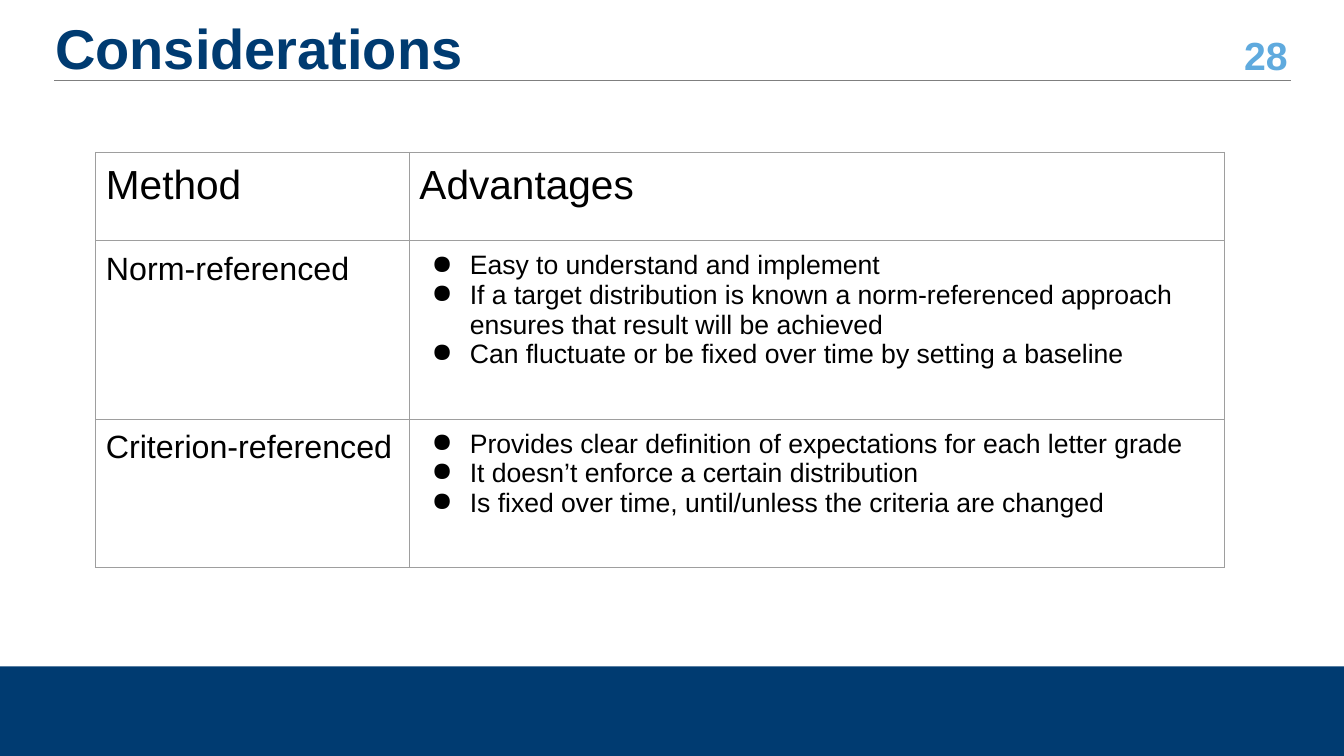
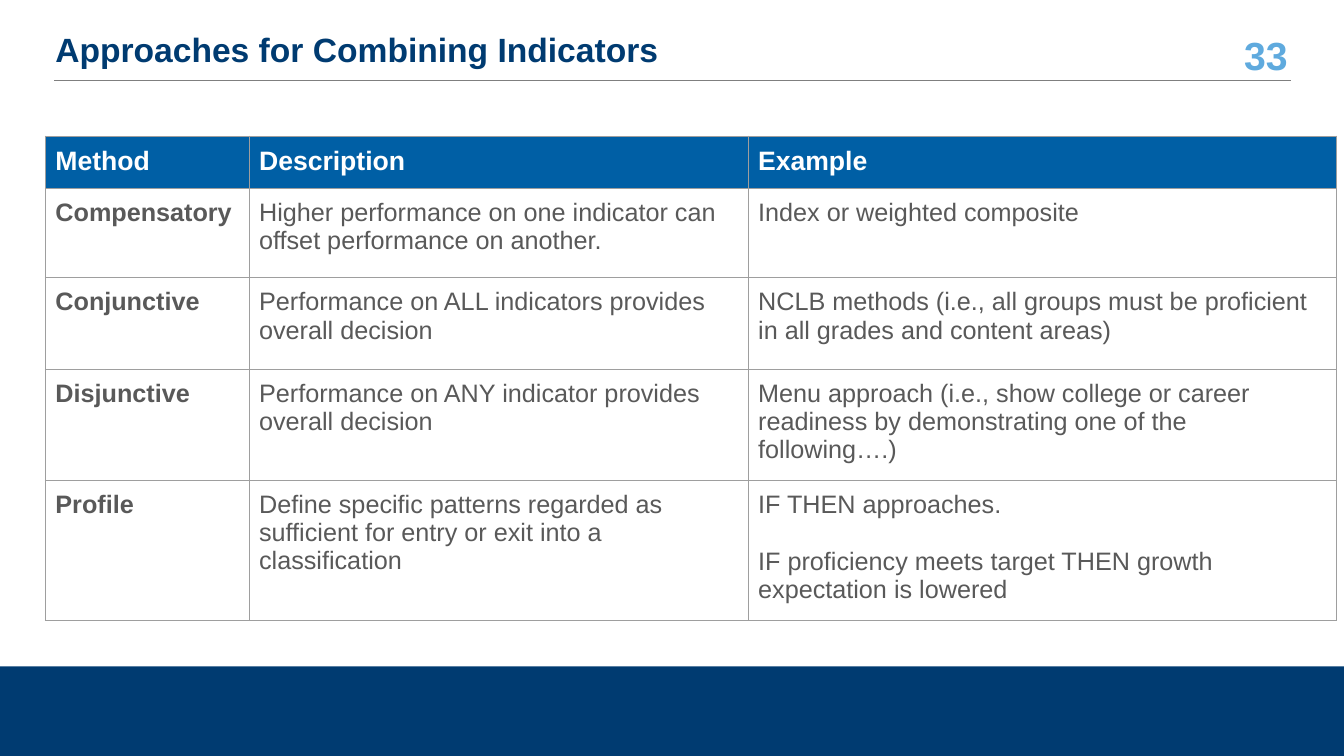
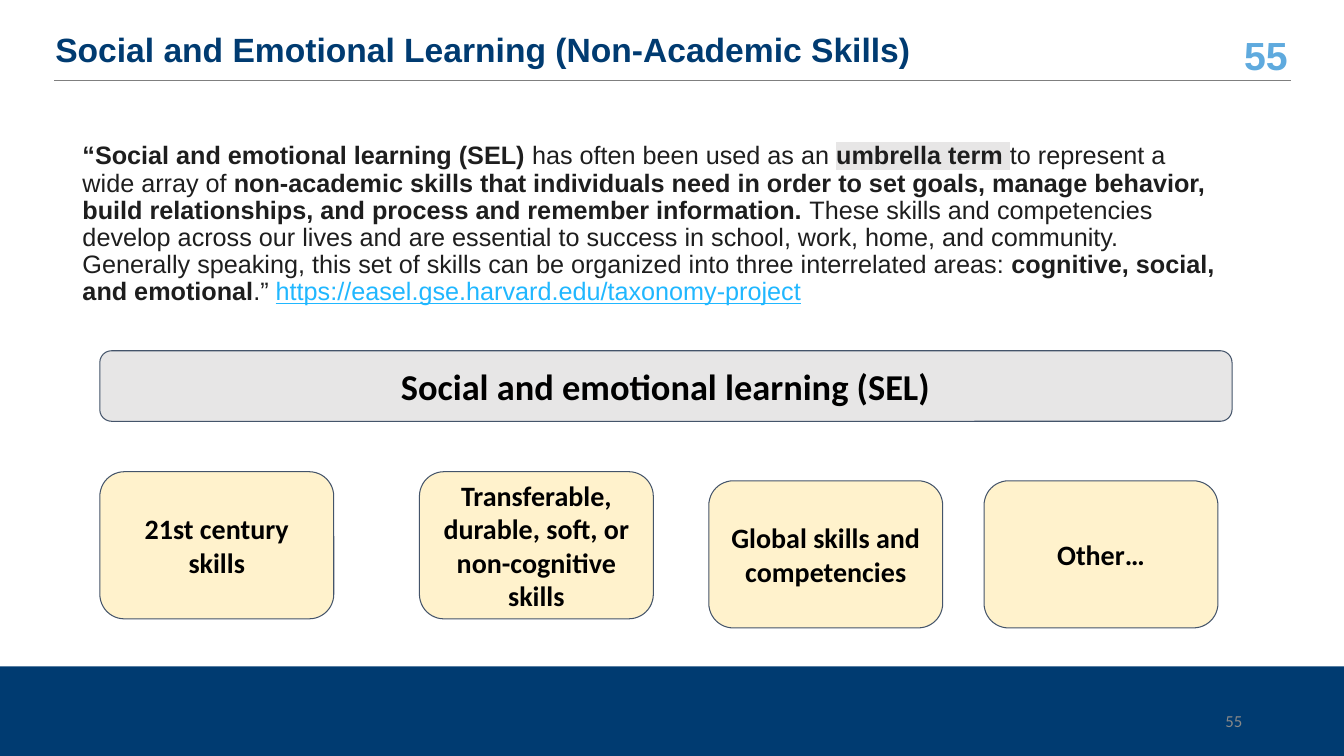
import pptx
import pptx.dml.color
import pptx.enum.shapes
import pptx.enum.text
import pptx.oxml
import pptx.oxml.ns
import pptx.util
from lxml import etree

Inches = pptx.util.Inches
Pt = pptx.util.Pt
SHAPE = pptx.enum.shapes.MSO_SHAPE
ALIGN = pptx.enum.text.PP_ALIGN
ANCHOR = pptx.enum.text.MSO_ANCHOR

COLORS = {
    "navy": "003B71", "sky": "5FAADE", "rule": "7F7F7F", "grid": "9E9E9E",
    "header": "005FA5", "white": "FFFFFF", "black": "000000", "gray": "595959",
    "ink": "1E1E1E", "link": "20B7FF", "silver": "E7E6E6", "cream": "FFF2CC",
    "slate": "44546A", "number": "888888",
}

CONSIDERATIONS = [
    ["Method", "Advantages"],
    ["Norm-referenced", [
        "Easy to understand and implement",
        "If a target distribution is known a norm-referenced approach ensures that result will be achieved",
        "Can fluctuate or be fixed over time by setting a baseline"]],
    ["Criterion-referenced", [
        "Provides clear definition of expectations for each letter grade",
        "It doesn’t enforce a certain distribution",
        "Is fixed over time, until/unless the criteria are changed"]],
]

APPROACHES = [
    ["Method", "Description", "Example"],
    ["Compensatory",
     "Higher performance on one indicator can offset performance on another.",
     "Index or weighted composite"],
    ["Conjunctive",
     "Performance on ALL indicators provides overall decision",
     "NCLB methods (i.e., all groups must be proficient in all grades and content areas)"],
    ["Disjunctive",
     "Performance on ANY indicator provides overall decision",
     "Menu approach (i.e., show college or career readiness by demonstrating one of the following….)"],
    ["Profile",
     "Define specific patterns regarded as sufficient for entry or exit into a classification",
     "IF THEN approaches.\nIF proficiency meets target THEN growth expectation is lowered"],
]

QUOTE = [
    ("“Social and emotional learning (SEL) ", "bold"),
    ("has often been used as an ", "plain"),
    ("umbrella term ", "marked"),
    ("to represent a wide array of", "plain"),
    (" non-academic skills that individuals need in order to set goals, manage behavior, "
     "build relationships, and process and remember information. ", "bold"),
    ("These skills and competencies develop across our lives and are essential to success in "
     "school, work, home, and community. Generally speaking, this set of skills can be "
     "organized into three interrelated areas: ", "plain"),
    ("cognitive, social, and emotional", "bold"),
    (".” ", "plain"),
    ("https://easel.gse.harvard.edu/taxonomy-project", "link"),
]

SKILLS = [
    (0.99, 4.68, "21st century skills"),
    (4.16, 4.68, "Transferable, durable, soft, or non-cognitive skills"),
    (7.03, 4.77, "Global skills and competencies"),
    (9.76, 4.77, "Other…"),
]


def rgb(color):
    """Return the named colour."""
    return pptx.dml.color.RGBColor.from_string(COLORS[color])


def style_run(run, size, color, bold=False, font="Arial"):
    """Set the look of one run."""
    run.font.size = Pt(size)
    run.font.name = font
    run.font.bold = bold
    run.font.color.rgb = rgb(color)


def style_text(frame, size, color, bold=False, font="Arial", align=ALIGN.LEFT):
    """Set the look of all text in a frame."""
    for paragraph in frame.paragraphs:
        paragraph.alignment = align
        for run in paragraph.runs:
            style_run(run, size, color, bold, font)


def add_text(slide, box, text="", anchor=ANCHOR.MIDDLE):
    """Add a wrapping text box and return its frame."""
    frame = slide.shapes.add_textbox(*map(Inches, box)).text_frame
    frame.word_wrap = True
    frame.vertical_anchor = anchor
    frame.text = text
    return frame


def add_block(slide, box, kind, fill, line=None):
    """Add a flat filled shape."""
    block = slide.shapes.add_shape(kind, *map(Inches, box))
    block.shadow.inherit = False
    block.fill.solid()
    block.fill.fore_color.rgb = rgb(fill)
    if line:
        block.line.color.rgb = rgb(line)
        block.line.width = Pt(0.75)
    else:
        block.line.fill.background()
    return block


def add_frame(deck, title, number, title_size=24):
    """Add a slide with its band, rule, title and number."""
    slide = deck.slides.add_slide(deck.slide_layouts[6])
    add_block(slide, (-0.01, 6.61, 13.34, 0.95), SHAPE.RECTANGLE, "navy")
    number_frame = add_text(slide, (12.07, 0.33, 0.8, 0.42), number)
    style_text(number_frame, 28, "sky", True, align=ALIGN.RIGHT)
    rule = slide.shapes.add_connector(
        pptx.enum.shapes.MSO_CONNECTOR.STRAIGHT,
        Inches(12.8), Inches(0.8), Inches(0.54), Inches(0.8))
    rule.line.color.rgb = rgb("rule")
    rule.line.width = Pt(0.75)
    etree.SubElement(rule.element.spPr, pptx.oxml.ns.qn("a:effectLst"))
    title_frame = add_text(slide, (0.45, 0.3, 11.6, 0.42), title)
    title_frame.paragraphs[0].line_spacing = 0.9
    style_text(title_frame, title_size, "navy", True)
    return slide


def add_borders(cell):
    """Draw a thin line on each side of a cell."""
    properties = cell._tc.get_or_add_tcPr()
    for side in ("lnL", "lnR", "lnT", "lnB"):
        properties.append(pptx.oxml.parse_xml(
            f'<a:{side} {pptx.oxml.ns.nsdecls("a")} w="9525"><a:solidFill>'
            f'<a:srgbClr val="{COLORS["grid"]}"/></a:solidFill></a:{side}>'))


def add_bullet(paragraph):
    """Give a paragraph a hanging round bullet."""
    properties = paragraph._p.get_or_add_pPr()
    properties.set("marL", str(Inches(0.5)))
    properties.set("indent", str(Inches(-0.38)))
    color = etree.SubElement(properties, pptx.oxml.ns.qn("a:buClr"))
    etree.SubElement(color, pptx.oxml.ns.qn("a:srgbClr"), val=COLORS["black"])
    etree.SubElement(properties, pptx.oxml.ns.qn("a:buChar"), char="●")


def add_grid(slide, left, top, widths, heights, rows, look):
    """Add a ruled table, with look giving size, colour, bold and fill of a cell."""
    table = slide.shapes.add_table(
        len(rows), len(widths), Inches(left), Inches(top),
        Inches(sum(widths)), Inches(sum(heights))).table
    table.first_row = table.horz_banding = False
    for column, width in zip(table.columns, widths):
        column.width = Inches(width)
    for row, height in zip(table.rows, heights):
        row.height = Inches(height)
    for i, row in enumerate(rows):
        for j, content in enumerate(row):
            size, color, bold, fill = look(i, j)
            cell = table.cell(i, j)
            cell.margin_left = cell.margin_right = Inches(0.1)
            cell.margin_top = cell.margin_bottom = Inches(0.1)
            add_borders(cell)
            if fill:
                cell.fill.solid()
                cell.fill.fore_color.rgb = rgb(fill)
            else:
                cell.fill.background()
            bulleted = isinstance(content, list)
            cell.text_frame.text = "\n".join(content) if bulleted else content
            for k, paragraph in enumerate(cell.text_frame.paragraphs):
                if bulleted:
                    add_bullet(paragraph)
                elif k:
                    paragraph.space_before = Pt(20.5)
            style_text(cell.text_frame, size, color, bold)


def considerations_look(row, column):
    """Return the look of a cell in the considerations table."""
    size = 29 if row == 0 else (23, 19)[column]
    return size, "black", False, None


def approaches_look(row, column):
    """Return the look of a cell in the approaches table."""
    if row == 0:
        return 19, "white", True, "header"
    return 18, "gray", column == 0, None


def add_quote(slide, box):
    """Add the quotation with its emphasis and source."""
    paragraph = add_text(slide, box, anchor=ANCHOR.TOP).paragraphs[0]
    paragraph.line_spacing = 0.9
    for text, emphasis in QUOTE:
        run = paragraph.add_run()
        run.text = text
        is_link = emphasis == "link"
        style_run(run, 18, "link" if is_link else "ink", emphasis in ("bold", "marked"))
        if is_link:
            run.font.underline = True
        if emphasis == "marked":
            run.font._rPr.find(pptx.oxml.ns.qn("a:solidFill")).addnext(pptx.oxml.parse_xml(
                f'<a:highlight {pptx.oxml.ns.nsdecls("a")}>'
                f'<a:srgbClr val="{COLORS["silver"]}"/></a:highlight>'))


def add_card(slide, box, text, fill, size):
    """Add a rounded card with centred bold text."""
    card = add_block(slide, box, SHAPE.ROUNDED_RECTANGLE, fill, "slate")
    frame = card.text_frame
    frame.word_wrap = True
    frame.vertical_anchor = ANCHOR.MIDDLE
    frame.margin_left = frame.margin_right = Inches(0.1)
    frame.margin_top = frame.margin_bottom = Inches(0.1)
    frame.text = text
    style_text(frame, size, "black", True, "Calibri", ALIGN.CENTER)


def build_considerations(deck):
    """Build the slide on the advantages of each method."""
    slide = add_frame(deck, "Considerations", "28", 40)
    add_grid(slide, 0.95, 1.51, [3.11, 8.08], [0.88, 1.77, 1.47],
             CONSIDERATIONS, considerations_look)


def build_approaches(deck):
    """Build the slide on combining indicators."""
    slide = add_frame(deck, "Approaches for Combining Indicators", "33")
    add_grid(slide, 0.45, 1.35, [2.02, 4.95, 5.84], [0.49, 0.89, 0.91, 1.04, 1.32],
             APPROACHES, approaches_look)


def build_learning(deck):
    """Build the slide on social and emotional learning."""
    slide = add_frame(deck, "Social and Emotional Learning (Non-Academic Skills)", "55")
    add_quote(slide, (0.72, 1.37, 11.5, 2.28))
    page_frame = add_text(slide, (9.42, 6.95, 3, 0.4), "55")
    style_text(page_frame, 12, "number", font="Calibri", align=ALIGN.RIGHT)
    add_card(slide, (0.99, 3.48, 11.23, 0.7), "Social and emotional learning (SEL)", "silver", 26)
    for left, top, skill in SKILLS:
        add_card(slide, (left, top, 2.32, 1.46), skill, "cream", 20)


def main():
    """Build and save the deck."""
    deck = pptx.Presentation()
    deck.slide_width = Inches(13.33)
    deck.slide_height = Inches(7.5)
    build_considerations(deck)
    build_approaches(deck)
    build_learning(deck)
    deck.save("out.pptx")


if __name__ == "__main__":
    main()
